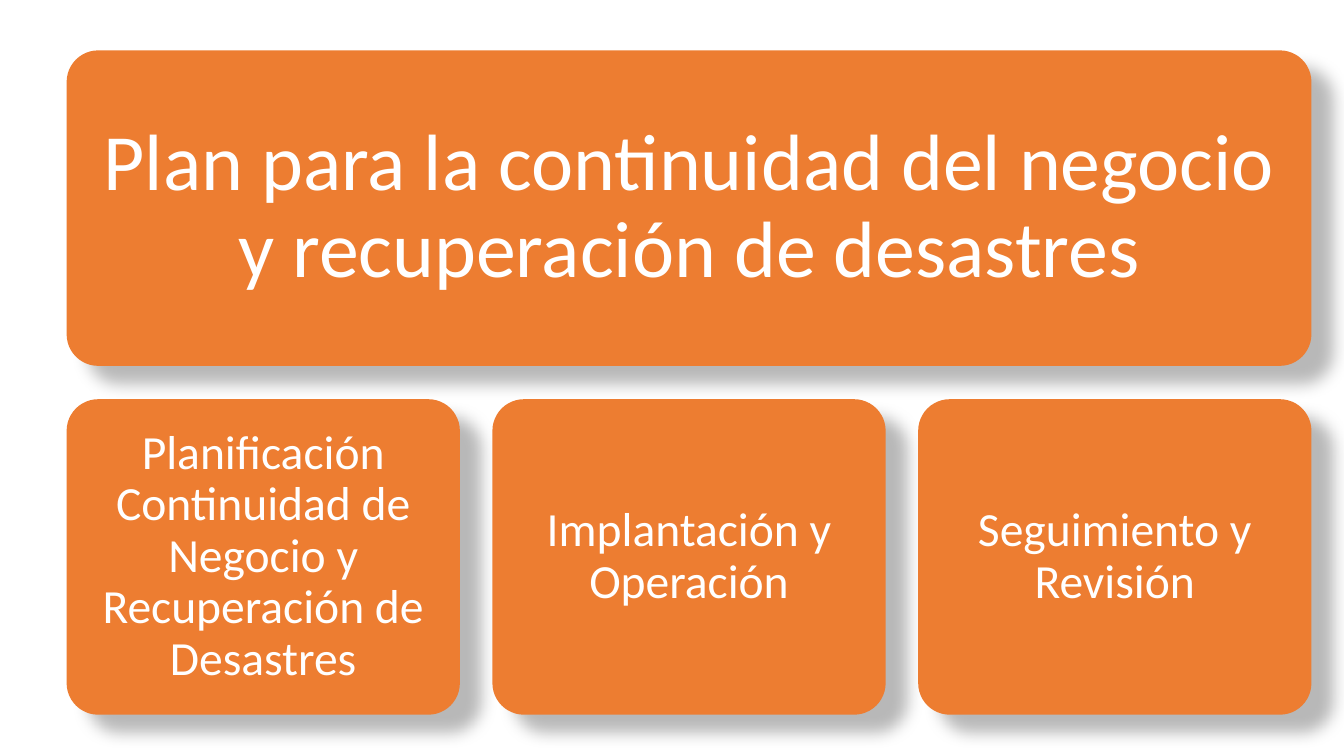
from lxml.etree import SubElement
from pptx import Presentation
from pptx.dml.color import RGBColor
from pptx.enum.shapes import MSO_SHAPE as Shape
from pptx.enum.text import MSO_ANCHOR as Anchor, PP_ALIGN as Align
from pptx.oxml.ns import qn
from pptx.util import Cm, Pt


def color(value):
    return RGBColor.from_string(value)


def write(frame, text, size, font="Calibri", ink="FFFFFF", spacing=0.9):
    para = frame.paragraphs[0]
    para.alignment = Align.CENTER
    para.line_spacing = spacing
    span = para.add_run()
    span.text = text
    span.font.name = font
    span.font.size = Pt(size)
    span.font.color.rgb = color(ink)


class PlanSlide:
    """Holds the style and the current slide, and draws its cards."""

    fill = "ED7D31"
    corner = 0.1

    def __init__(self, page):
        self.page = page

    def shadow(self, box):
        box.shadow.inherit = False
        effects = box._element.spPr.find(qn("a:effectLst"))
        outer = SubElement(effects, qn("a:outerShdw"), blurRad=str(Pt(11.8)),
                           dist=str(Pt(19.7)), dir=str(40 * 60000),
                           algn="ctr", rotWithShape="0")
        shade = SubElement(outer, qn("a:srgbClr"), val="000000")
        SubElement(shade, qn("a:alpha"), val="28000")

    def card(self, text, left, top, width, height, size, inset):
        box = self.page.shapes.add_shape(
            Shape.ROUNDED_RECTANGLE, Cm(left), Cm(top), Cm(width), Cm(height))
        box.adjustments[0] = self.corner
        box.fill.solid()
        box.fill.fore_color.rgb = color(self.fill)
        box.line.fill.background()
        self.shadow(box)
        frame = box.text_frame
        frame.word_wrap = True
        frame.vertical_anchor = Anchor.MIDDLE
        frame.margin_left = frame.margin_right = Cm(inset)
        frame.margin_top = frame.margin_bottom = Cm(inset)
        write(frame, text, size)


def main():
    deck = Presentation()
    deck.slide_width, deck.slide_height = Cm(33.87), Cm(19.05)
    slide = PlanSlide(deck.slides.add_slide(deck.slide_layouts[6]))

    left, width, height = 1.68, 31.37, 7.95
    slide.card("Plan para la continuidad del negocio y recuperación de desastres",
               left, 1.27, width, height, size=57, inset=0.6)

    phases = ["Planificación Continuidad de Negocio y Recuperación de Desastres",
              "Implantación y Operación",
              "Seguimiento y Revisión"]
    phase_width = 9.91
    step = (width - phase_width) / (len(phases) - 1)
    for index, phase in enumerate(phases):
        slide.card(phase, left + index * step, 10.06, phase_width, height,
                   size=34, inset=0.36)

    deck.save("out.pptx")


if __name__ == "__main__":
    main()
